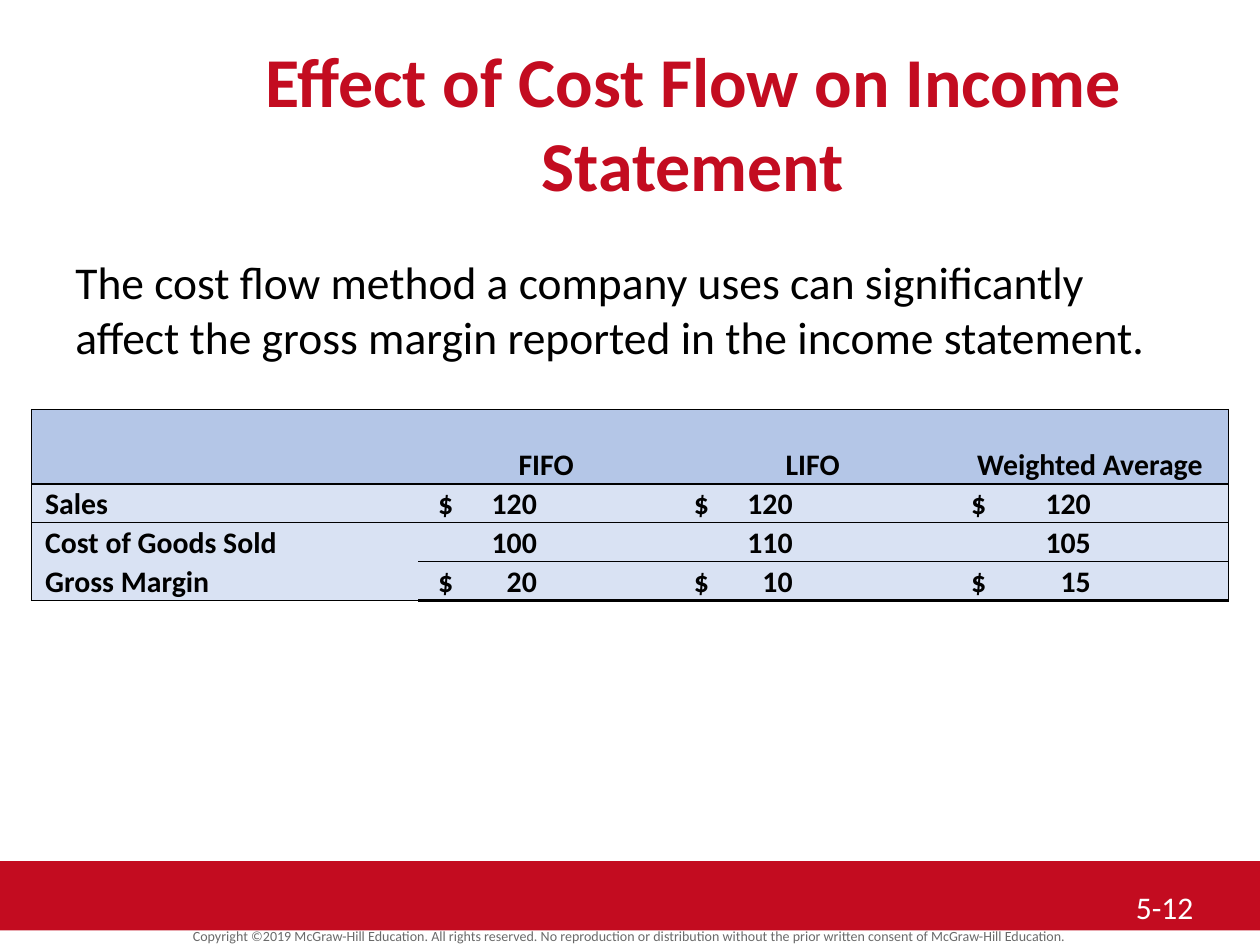
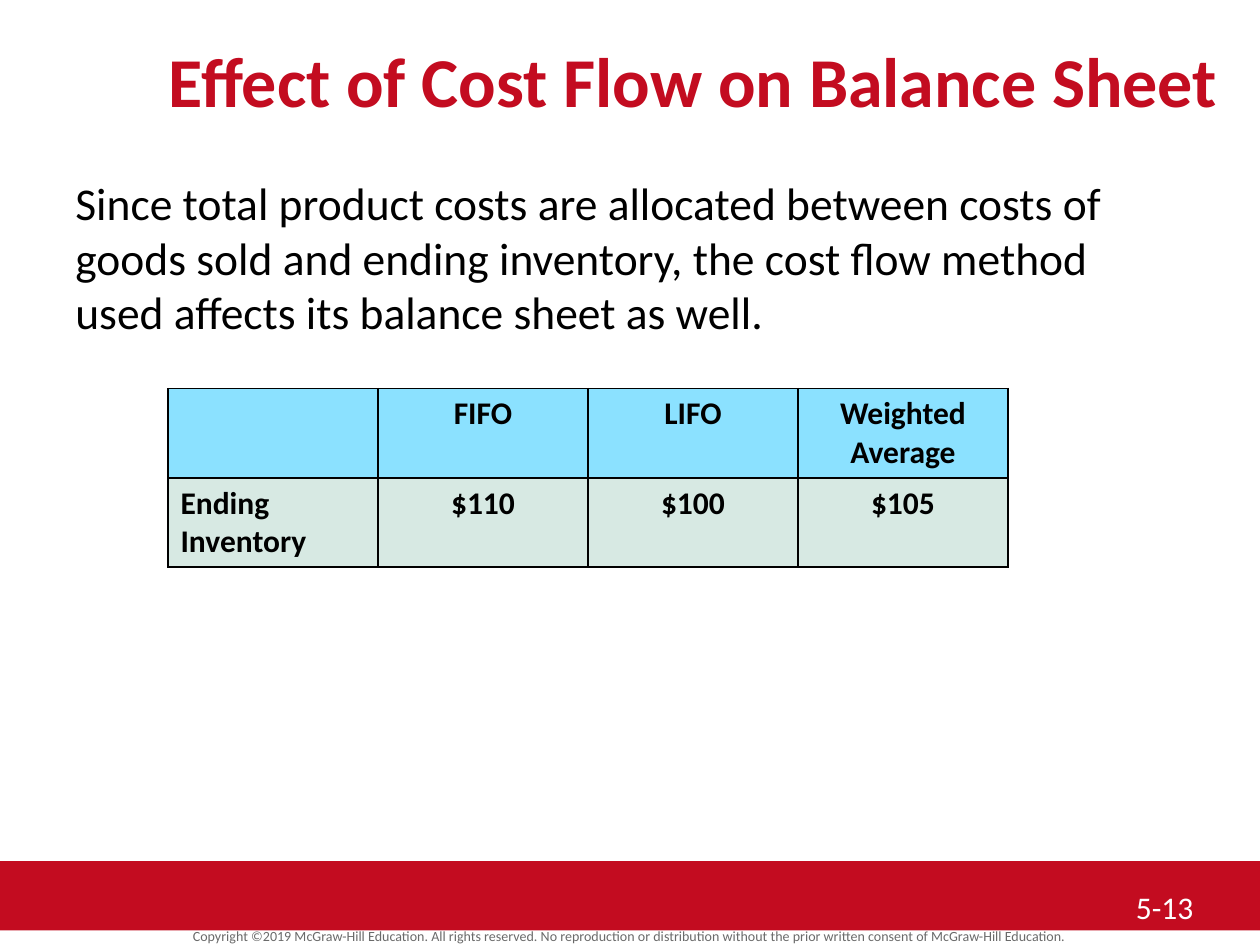
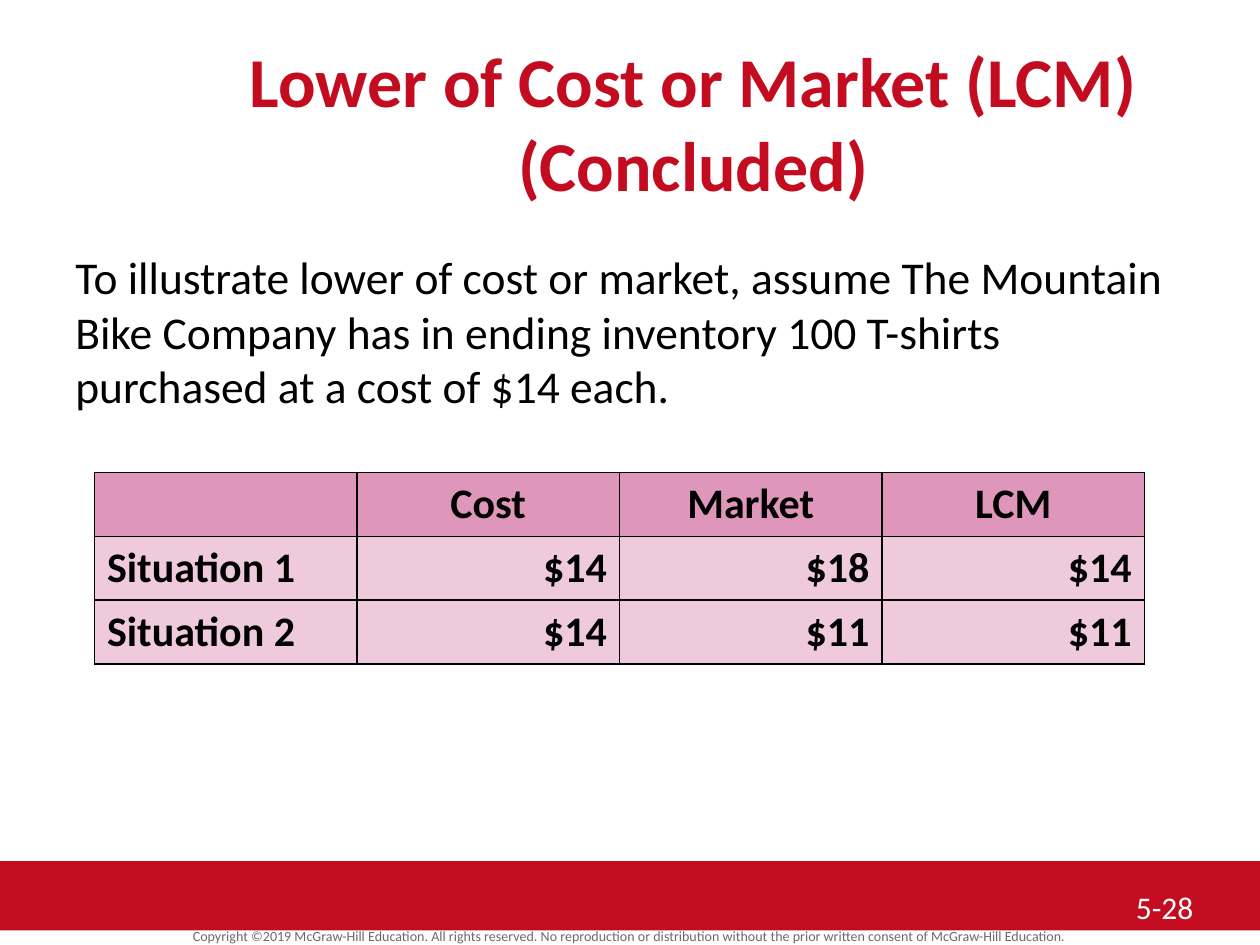
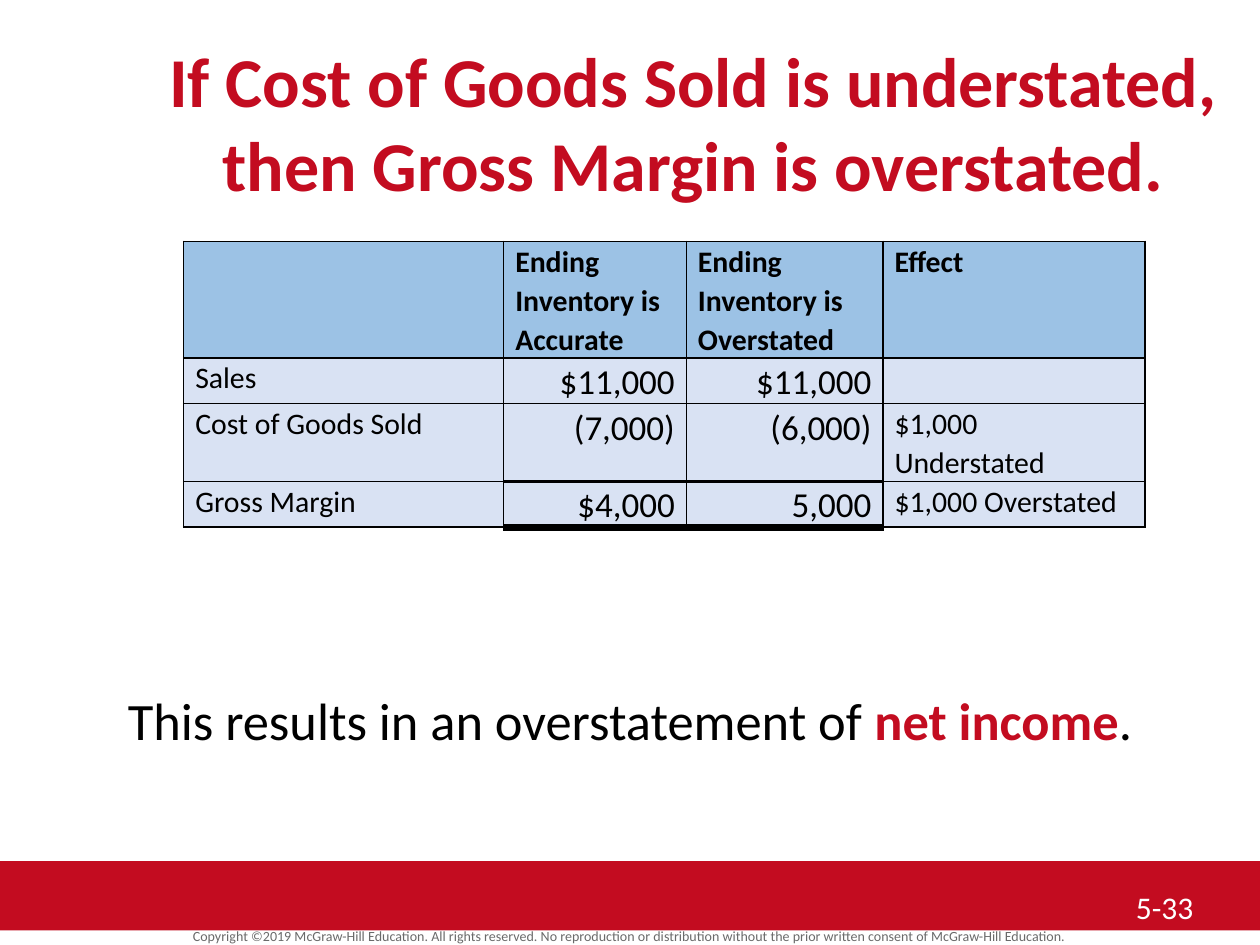
from dataclasses import dataclass

from lxml import etree
from pptx import Presentation, util as u
from pptx.dml.color import RGBColor
from pptx.enum import shapes, text
from pptx.oxml import ns

COLUMNS, ROWS = 120, 90
ALIGN = {"l": text.PP_ALIGN.LEFT, "c": text.PP_ALIGN.CENTER, "r": text.PP_ALIGN.RIGHT}
NO_TABLE_STYLE = "{2D5ABB26-0587-4C30-8999-92F81FD0307C}"
COPYRIGHT = (
    "Copyright ©2019 McGraw-Hill Education. All rights reserved. No reproduction or "
    "distribution without the prior written consent of McGraw-Hill Education."
)


@dataclass(frozen=True)
class Theme:
    font: str = "Calibri"
    red: str = "C30C20"
    black: str = "000000"
    white: str = "FFFFFF"
    grey: str = "6A6A6A"
    blue_head: str = "B4C6E7"
    blue_body: str = "D9E2F3"
    sky_head: str = "8BE1FF"
    mint_body: str = "D7E9E3"
    pink_head: str = "DF96BB"
    pink_body: str = "EFCADD"
    steel_head: str = "9CC2E5"
    title: int = 40
    body: int = 26
    conclusion: int = 30
    number: int = 18
    copyright: int = 8
    small_cell: int = 17
    cell: int = 18
    figure: int = 20
    large_cell: int = 24


@dataclass
class TableLook:
    head: str
    body: str
    size: int
    head_align: str = "lccc"
    body_align: str = "lccc"
    figure_size: int = 0
    body_bold: bool = True
    side_margin: float = 1.2
    end_margin: float = 0.6
    anchor: text.MSO_ANCHOR = text.MSO_ANCHOR.TOP
    line_spacing: float = 1.0
    tabs: tuple = ()


@dataclass
class Rule:
    sides: str
    rows: range
    cols: range
    width: float = 1


def rule_below(row, cols, width=1):
    return [Rule("B", range(row, row + 1), cols, width),
            Rule("T", range(row + 1, row + 2), cols, width)]


class Deck:
    def __init__(self, theme):
        self.theme = theme
        self.prs = Presentation()
        self.prs.slide_width, self.prs.slide_height = u.Inches(10), u.Inches(7.5)
        self.layout = self.prs.slide_layouts[5]
        self.s = None

    def x(self, columns):
        return round(self.prs.slide_width * columns / COLUMNS)

    def y(self, rows):
        return round(self.prs.slide_height * rows / ROWS)

    def box(self, left, top, width, height):
        return self.x(left), self.y(top), self.x(width), self.y(height)

    def style(self, p, size, color, bold=False, align="l"):
        p.alignment = ALIGN[align]
        p.font.name, p.font.size, p.font.bold = self.theme.font, u.Pt(size), bold
        p.font.color.rgb = RGBColor.from_string(color)

    def slide(self, title, number):
        t = self.theme
        self.s = self.prs.slides.add_slide(self.layout)
        if len(self.prs.slides) == 1:
            self.share(self.band(), self.text(COPYRIGHT, (0, 88.08, 120, 2.28),
                                              t.copyright, t.grey, "c", spacing=0.8))
        self.title(title)
        self.text(number, (107, 84, 11, 5), t.number, t.white)

    def share(self, *parts):
        for i, sp in enumerate(parts, 20):
            sp._element.nvSpPr.cNvPr.set("id", str(i))
            self.layout.shapes._spTree.append(sp._element)

    def band(self):
        sp = self.s.shapes.add_shape(shapes.MSO_SHAPE.RECTANGLE, *self.box(0, 82, 120, 6.6))
        sp.shadow.inherit = False
        sp.fill.solid()
        sp.fill.fore_color.rgb = RGBColor.from_string(self.theme.red)
        sp.line.fill.background()
        return sp

    def title(self, words):
        sp = self.s.shapes.title
        sp.left, sp.top, sp.width, sp.height = self.box(12, 3, 108, 8)
        tf = sp.text_frame
        tf.text = words
        tf.word_wrap = True
        tf.auto_size = text.MSO_AUTO_SIZE.NONE
        tf.vertical_anchor = text.MSO_ANCHOR.TOP
        self.style(tf.paragraphs[0], self.theme.title, self.theme.red, True, "c")

    def text(self, words, box, size, color, align="l", spacing=None, inset=0.6):
        sp = self.s.shapes.add_textbox(*self.box(*box))
        tf = sp.text_frame
        tf.word_wrap = True
        tf.margin_top = self.y(inset)
        p = tf.paragraphs[0]
        p.line_spacing = spacing
        for i, part in enumerate(words.split("*")):
            r = p.add_run()
            r.text = part
            if i % 2:
                r.font.bold = True
                r.font.color.rgb = RGBColor.from_string(self.theme.red)
        self.style(p, size, color, align=align)
        return sp

    def body(self, words, inset, size=None, align="l"):
        self.text(words, (6, 16, 108, 62), size or self.theme.body,
                  self.theme.black, align, inset=inset)

    def table(self, left, top, widths, heights, rows, look, rules):
        frame = self.s.shapes.add_table(
            len(rows), len(widths), *self.box(left, top, sum(widths), sum(heights)))
        tb = frame.table
        tb._tbl.find(".//" + ns.qn("a:tableStyleId")).text = NO_TABLE_STYLE
        tb.first_row = tb.horz_banding = False
        for col, width in zip(tb.columns, widths):
            col.width = self.x(width)
        for row, height in zip(tb.rows, heights):
            row.height = self.y(height)
        for r, row in enumerate(rows):
            for c, words in enumerate(row):
                cell = tb.cell(r, c)
                self.cell(cell, words, r, c, look)
                self.borders(cell, {side: rule.width for rule in rules
                                    if r in rule.rows and c in rule.cols
                                    for side in rule.sides})

    def cell(self, cell, words, r, c, look):
        head = r == 0
        align = (look.head_align if head else look.body_align)[c]
        tabbed = bool(look.tabs) and not head and c > 0
        size = look.figure_size if look.figure_size and align == "r" else look.size
        cell.fill.solid()
        cell.fill.fore_color.rgb = RGBColor.from_string(look.head if head else look.body)
        cell.vertical_anchor = look.anchor
        cell.margin_left = self.x(look.side_margin + (0.6 if tabbed else 0))
        cell.margin_right = self.x(look.side_margin)
        cell.margin_top = cell.margin_bottom = self.y(look.end_margin)
        if not words:
            return
        p = cell.text_frame.paragraphs[0]
        p.text = words
        if tabbed:
            tabs = etree.SubElement(p._p.get_or_add_pPr(), ns.qn("a:tabLst"))
            etree.SubElement(tabs, ns.qn("a:tab"), pos=str(self.x(look.tabs[c - 1])), algn="r")
        p.line_spacing = look.line_spacing
        self.style(p, size, self.theme.black, head or look.body_bold, align)

    def borders(self, cell, widths):
        tcPr = cell._tc.get_or_add_tcPr()
        for i, side in enumerate(side for side in "LRTB" if side in widths):
            ln = etree.Element(ns.qn("a:ln" + side), w=str(u.Pt(widths[side])))
            fill = etree.SubElement(ln, ns.qn("a:solidFill"))
            etree.SubElement(fill, ns.qn("a:srgbClr"), val=self.theme.black)
            tcPr.insert(i, ln)


def main():
    t = Theme()
    deck = Deck(t)
    every, figures = range(4), range(1, 4)
    grid = [Rule("LRTB", every, every)]

    deck.slide("Effect of Cost Flow on Income Statement", "5-12")
    deck.body("The cost flow method a company uses can significantly affect the gross "
              "margin reported in the income statement.", 8.2)
    deck.table(
        3, 39, [36.84, 24.36, 26.4, 26.4], [7.08, 3.7, 3.7, 3.7],
        [["", "FIFO", "LIFO", "Weighted Average"],
         ["Sales", "$\t120", "$\t120", "$\t120"],
         ["Cost of Goods Sold", "\t100", "\t110", "\t105"],
         ["Gross Margin", "$\t20", "$\t10", "$\t15"]],
        TableLook(t.blue_head, t.blue_body, t.small_cell, body_align="llll",
                  side_margin=1.3, end_margin=0, anchor=text.MSO_ANCHOR.BOTTOM,
                  line_spacing=1.07, tabs=(9.4, 9.4, 11.4)),
        [Rule("T", range(1), every), Rule("L", every, range(1)),
         Rule("R", every, range(3, 4)), Rule("B", range(3, 4), range(1)),
         *rule_below(0, every), *rule_below(2, figures), *rule_below(3, figures, 2.25)])

    deck.slide("Effect of Cost Flow on Balance Sheet", "5-13")
    deck.body("Since total product costs are allocated between costs of goods sold and "
              "ending inventory, the cost flow method used affects its balance sheet "
              "as well.", 0.7)
    deck.table(
        16, 37, [20] * 4, [8.5] * 2,
        [["", "FIFO", "LIFO", "Weighted Average"],
         ["Ending Inventory", "$110", "$100", "$105"]],
        TableLook(t.sky_head, t.mint_body, t.cell), grid)

    deck.slide("Lower of Cost or Market (LCM) (Concluded)", "5-28")
    deck.body("To illustrate lower of cost or market, assume The Mountain Bike Company "
              "has in ending inventory 100 T-shirts purchased at a cost of $14 each.", 7.75)
    deck.table(
        9, 45, [25] * 4, [6.08] * 3,
        [["", "Cost", "Market", "LCM"],
         ["Situation 1", "$14", "$18", "$14"],
         ["Situation 2", "$14", "$11", "$11"]],
        TableLook(t.pink_head, t.pink_body, t.large_cell, body_align="lrrr"), grid)

    deck.slide("If Cost of Goods Sold is understated, then Gross Margin is overstated.", "5-33")
    deck.body("This results in an overstatement of *net income*.", 49.5, t.conclusion, "c")
    amounts = range(1, 3)
    deck.table(
        17.5, 23, [30.48, 17.4, 18.72, 24.96], [11.1, 4.36, 7.4, 4.36],
        [["", "Ending Inventory is Accurate", "Ending Inventory is Overstated", "Effect"],
         ["Sales", "$11,000", "$11,000", ""],
         ["Cost of Goods Sold", "(7,000)", "(6,000)", "$1,000 Understated"],
         ["Gross Margin", "$4,000", "5,000", "$1,000 Overstated"]],
        TableLook(t.steel_head, t.blue_body, t.small_cell, "llll", "lrrl", t.figure,
                  body_bold=False, side_margin=1.1, end_margin=0, line_spacing=1.07),
        grid + rule_below(2, amounts, 1.5) + rule_below(3, amounts, 4.5))

    deck.prs.save("out.pptx")


if __name__ == "__main__":
    main()
